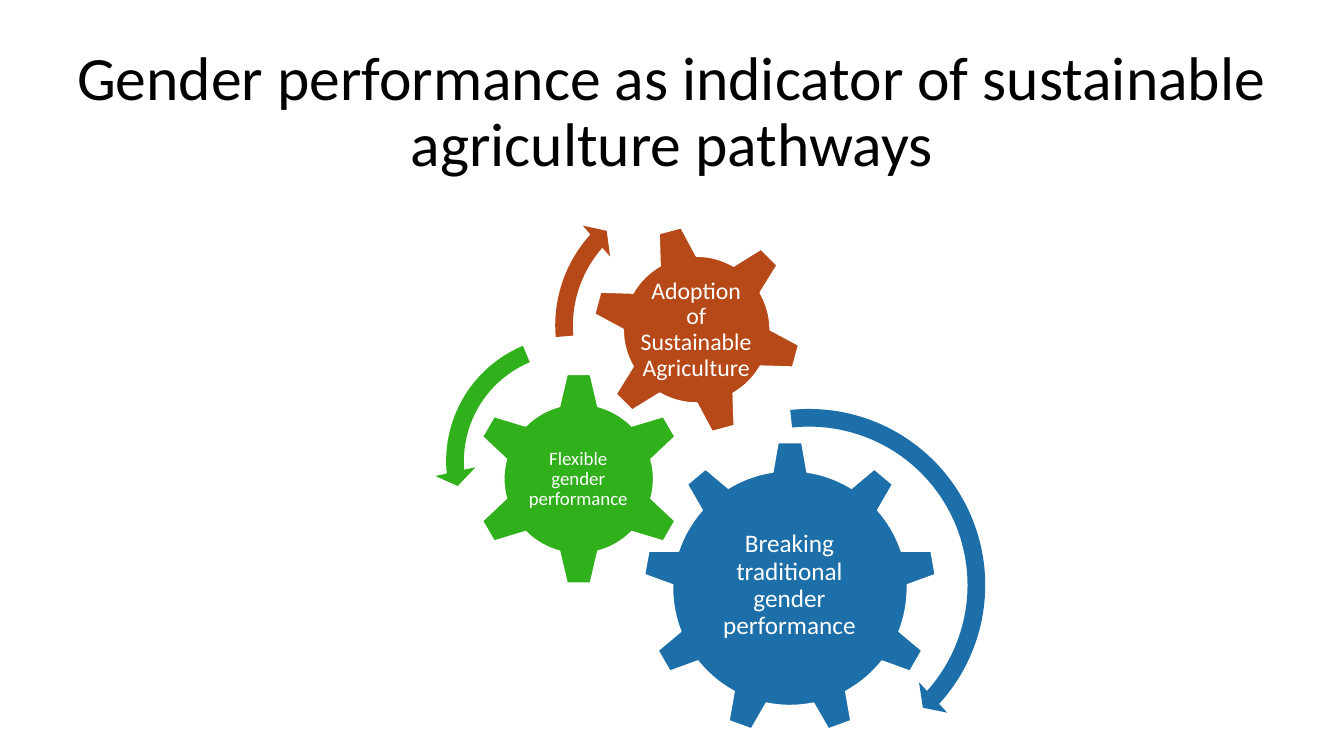
from pptx import Presentation
from pptx.dml.color import RGBColor
from pptx.enum.shapes import MSO_SHAPE as SHP
from pptx.enum.text import MSO_ANCHOR, MSO_AUTO_SIZE, PP_ALIGN
from pptx.util import Inches, Pt

# Content
TITLE = "Gender performance as indicator of sustainable agriculture pathways"
COLORS = {"blue": "1D6FA9", "green": "30B01B", "rust": "B74919",
          "white": "FFFFFF", "black": "000000"}

# Gears: left, top and side; the label has its own box and inset
GEARS = [
    {"shape": SHP.GEAR_9, "color": "blue", "at": (6.38, 4.38, 2.91), "rot": 0,
     "text": "Breaking traditional gender performance", "size": 18,
     "box": (6.96, 5.06, 1.74, 1.5), "inset": 0.03},
    {"shape": SHP.GEAR_6, "color": "green", "at": (4.68, 3.69, 2.12), "rot": 0,
     "text": "Flexible gender performance", "size": 13.5,
     "box": (5.21, 4.23, 1.05, 1.05), "inset": 0.02},
    {"shape": SHP.GEAR_6, "color": "rust", "at": (5.87, 2.23, 2.08), "rot": 345,
     "text": "Adoption of Sustainable Agriculture", "size": 17,
     "box": (6.32, 2.69, 1.17, 1.17), "inset": 0.02},
]

# Turning arrows: shape, colour, (left, top, side), adjustments
ARROWS = [
    (SHP.CIRCULAR_ARROW, "blue", (6.16, 3.94, 3.73),
     (0.047, 2.99, 25.3, 158.32, 0.055)),
    (SHP.LEFT_CIRCULAR_ARROW, "green", (4.31, 3.22, 2.71),
     (0.065, 4.3, 104.89, 148.38, 0.075)),
    (SHP.CIRCULAR_ARROW, "rust", (5.39, 1.77, 2.92),
     (0.06, 3.94, 133.14, 105.08, 0.07)),
]


def rgb(name):
    return RGBColor.from_string(COLORS[name])


def write(tf, text, size, color):
    for key, value in {"word_wrap": True, "auto_size": MSO_AUTO_SIZE.NONE,
                       "vertical_anchor": MSO_ANCHOR.MIDDLE}.items():
        setattr(tf, key, value)
    p = tf.paragraphs[0]
    p.alignment = PP_ALIGN.CENTER
    p.line_spacing = 0.9
    r = p.add_run()
    r.text = text
    r.font.name = "Calibri"
    r.font.size = Pt(size)
    r.font.color.rgb = rgb(color)


def add_square(shapes, kind, color, at):
    left, top, side = map(Inches, at)
    sp = shapes.add_shape(kind, left, top, side, side)
    sp.shadow.inherit = False
    sp.fill.solid()
    sp.fill.fore_color.rgb = rgb(color)
    return sp


prs = Presentation()
prs.slide_width, prs.slide_height = Inches(13.33), Inches(7.5)
s = prs.slides.add_slide(prs.slide_layouts[5])

# Title
title = s.shapes.title
title.left, title.top, title.width, title.height = map(Inches, (0, 0.4, 13.33, 1.45))
write(title.text_frame, TITLE, 44, "black")

# Gears with upright labels
diagram = s.shapes.add_group_shape().shapes
for gear in GEARS:
    sp = add_square(diagram, gear["shape"], gear["color"], gear["at"])
    sp.rotation = gear["rot"]
    sp.line.color.rgb = rgb("white")
    sp.line.width = Pt(1)
    tf = diagram.add_textbox(*map(Inches, gear["box"])).text_frame
    for side in ("left", "top", "right", "bottom"):
        setattr(tf, f"margin_{side}", Inches(gear["inset"]))
    write(tf, gear["text"], gear["size"], "white")

# Arrows around the gears
for kind, color, at, adjustments in ARROWS:
    sp = add_square(diagram, kind, color, at)
    sp.line.fill.background()
    for i, value in enumerate(adjustments):
        sp.adjustments[i] = value

prs.save("out.pptx")
